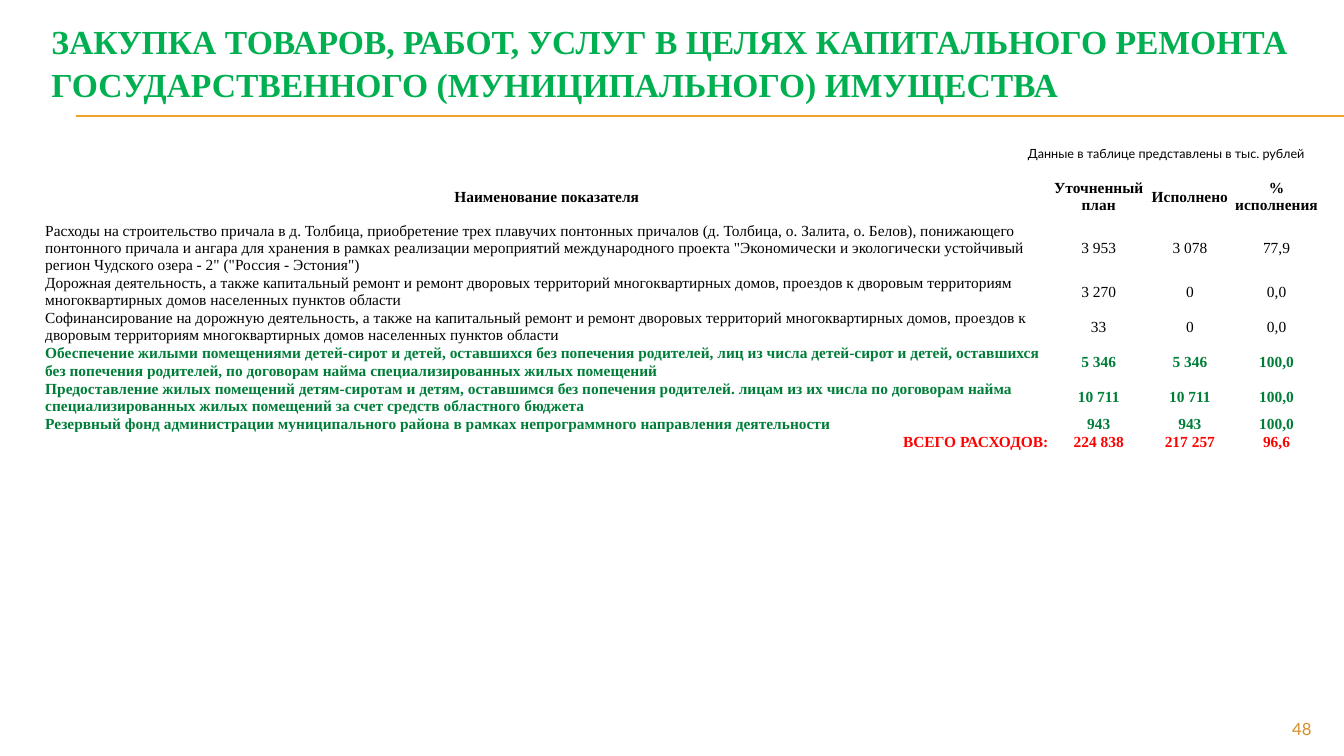
"""Build the slide on capital repair purchases for state and municipal property."""
import lxml.etree
import pptx
import pptx.dml.color
import pptx.enum.shapes
import pptx.enum.text
import pptx.oxml.ns
import pptx.util

Pt = pptx.util.Pt
RGBColor = pptx.dml.color.RGBColor
ALIGN = pptx.enum.text.PP_ALIGN
ANCHOR = pptx.enum.text.MSO_ANCHOR
qn = pptx.oxml.ns.qn

TITLE_GREEN = RGBColor(0x00, 0xB0, 0x50)
ROW_GREEN = RGBColor(0x00, 0x7E, 0x39)
ORANGE = RGBColor(0xF0, 0xA2, 0x2E)
DARK_ORANGE = RGBColor(0xD4, 0x8F, 0x29)
RED = RGBColor(0xFF, 0x00, 0x00)
BLACK = RGBColor(0x00, 0x00, 0x00)
WHITE = RGBColor(0xFF, 0xFF, 0xFF)

TITLE = ("ЗАКУПКА ТОВАРОВ, РАБОТ, УСЛУГ В ЦЕЛЯХ КАПИТАЛЬНОГО РЕМОНТА "
         "ГОСУДАРСТВЕННОГО (МУНИЦИПАЛЬНОГО) ИМУЩЕСТВА")
COLUMN_WIDTHS = (717.84, 70.56, 59.76, 64.08)
ROW_HEIGHTS = (36, 20, 20, 20, 20, 20, 10, 12)
HEADER = (("Наименование показателя", "Уточненный план", "Исполнено", "% исполнения"),)
PLAIN_ROWS = (
    ("Расходы на строительство причала в д. Толбица, приобретение трех плавучих понтонных "
     "причалов (д. Толбица, о. Залита, о. Белов), понижающего понтонного причала и ангара для "
     "хранения в рамках реализации мероприятий международного проекта \"Экономически и "
     "экологически устойчивый регион Чудского озера - 2\" (\"Россия - Эстония\")",
     "3 953", "3 078", "77,9"),
    ("Дорожная деятельность, а также капитальный ремонт и ремонт дворовых территорий "
     "многоквартирных домов, проездов к дворовым территориям многоквартирных домов "
     "населенных пунктов области", "3 270", "0", "0,0"),
    ("Софинансирование на дорожную деятельность, а также на капитальный ремонт и ремонт "
     "дворовых территорий многоквартирных домов, проездов к дворовым территориям "
     "многоквартирных домов населенных пунктов области", "33", "0", "0,0"),
)
GREEN_ROWS = (
    ("Обеспечение жилыми помещениями детей-сирот и детей, оставшихся без попечения родителей, "
     "лиц из числа детей-сирот и детей, оставшихся без попечения родителей, по договорам найма "
     "специализированных жилых помещений", "5 346", "5 346", "100,0"),
    ("Предоставление жилых помещений детям-сиротам и детям, оставшимся без попечения "
     "родителей. лицам из их числа по договорам найма специализированных жилых помещений "
     "за счет средств областного бюджета", "10 711", "10 711", "100,0"),
    ("Резервный фонд администрации муниципального района в рамках непрограммного "
     "направления деятельности", "943", "943", "100,0"),
)
TOTAL = (("ВСЕГО РАСХОДОВ:", "224 838", "217 257", "96,6"),)
ROW_GROUPS = (
    (HEADER, BLACK, True, ALIGN.CENTER, ANCHOR.MIDDLE),
    (PLAIN_ROWS, BLACK, False, ALIGN.LEFT, ANCHOR.TOP),
    (GREEN_ROWS, ROW_GREEN, True, ALIGN.LEFT, ANCHOR.TOP),
    (TOTAL, RED, True, ALIGN.RIGHT, ANCHOR.BOTTOM),
)


class SlideBuilder:
    serif = "Times New Roman"
    sans = "Lato"

    def __init__(self, slide):
        self.slide = slide

    def set_text(self, text_frame, text, font_name, size, color, bold=False, align=ALIGN.LEFT):
        text_frame.text = text
        paragraph = text_frame.paragraphs[0]
        paragraph.alignment = align
        font = paragraph.runs[0].font
        font.name = font_name
        font.size = Pt(size)
        font.bold = bold
        font.color.rgb = color
        return paragraph

    def title(self, text, left, top, width, height):
        shape = self.slide.shapes.title
        shape.left, shape.top, shape.width, shape.height = map(Pt, (left, top, width, height))
        text_frame = shape.text_frame
        paragraph = self.set_text(text_frame, text, self.serif, 24, TITLE_GREEN, bold=True)
        paragraph.line_spacing = 1.06
        text_frame.auto_size = pptx.enum.text.MSO_AUTO_SIZE.NONE
        text_frame.vertical_anchor = ANCHOR.MIDDLE
        text_frame.word_wrap = True

    def rule(self, left, right, y):
        connector = self.slide.shapes.add_connector(
            pptx.enum.shapes.MSO_CONNECTOR.STRAIGHT, Pt(left), Pt(y), Pt(right), Pt(y))
        connector.line.color.rgb = ORANGE
        connector.line.width = Pt(0.75)
        lxml.etree.SubElement(connector._element.spPr, qn("a:effectLst"))

    def label(self, text, left, top, width, height, size, color, align, wrap=True):
        text_box = self.slide.shapes.add_textbox(Pt(left), Pt(top), Pt(width), Pt(height))
        text_box.text_frame.word_wrap = wrap
        self.set_text(text_box.text_frame, text, self.sans, size, color, align=align)

    def border(self, cell):
        properties = cell._tc.get_or_add_tcPr()
        for index, side in enumerate(("lnL", "lnR", "lnT", "lnB")):
            line = lxml.etree.Element(qn(f"a:{side}"), w=str(Pt(1)))
            fill = lxml.etree.SubElement(line, qn("a:solidFill"))
            lxml.etree.SubElement(fill, qn("a:srgbClr"), val=str(WHITE))
            properties.insert(index, line)

    def table(self, left, top):
        frame = self.slide.shapes.add_table(
            len(ROW_HEIGHTS), len(COLUMN_WIDTHS), Pt(left), Pt(top),
            Pt(sum(COLUMN_WIDTHS)), Pt(sum(ROW_HEIGHTS)))
        table = frame.table
        table.first_row = table.horz_banding = False
        for column, width in zip(table.columns, COLUMN_WIDTHS):
            column.width = Pt(width)
        for row, height in zip(table.rows, ROW_HEIGHTS):
            row.height = Pt(height)
        rows = iter(table.rows)
        for records, color, bold, name_align, name_anchor in ROW_GROUPS:
            for record in records:
                for index, (cell, text) in enumerate(zip(next(rows).cells, record)):
                    align = ALIGN.CENTER if index else name_align
                    self.set_text(cell.text_frame, text, self.serif, 11, color, bold, align)
                    cell.vertical_anchor = ANCHOR.MIDDLE if index else name_anchor
                    cell.margin_left = cell.margin_right = cell.margin_top = Pt(0.6)
                    cell.margin_bottom = 0
                    cell.fill.background()
                    self.border(cell)


def main():
    presentation = pptx.Presentation()
    presentation.slide_width = Pt(960)
    presentation.slide_height = Pt(540)
    builder = SlideBuilder(presentation.slides.add_slide(presentation.slide_layouts[5]))
    for y in (82.8, 83.3):
        builder.rule(54, 960, y)
    builder.title(TITLE, 29.5, 10.8, 912.24, 66.24)
    builder.table(31.7, 122.4)
    builder.label("48", 864, 509.8, 79.9, 19.4, 12, DARK_ORANGE, ALIGN.RIGHT)
    builder.label("Данные в таблице представлены в тыс. рублей",
                  727.2, 100.8, 214.6, 18, 9, BLACK, ALIGN.LEFT, wrap=False)
    presentation.save("out.pptx")


if __name__ == "__main__":
    main()
